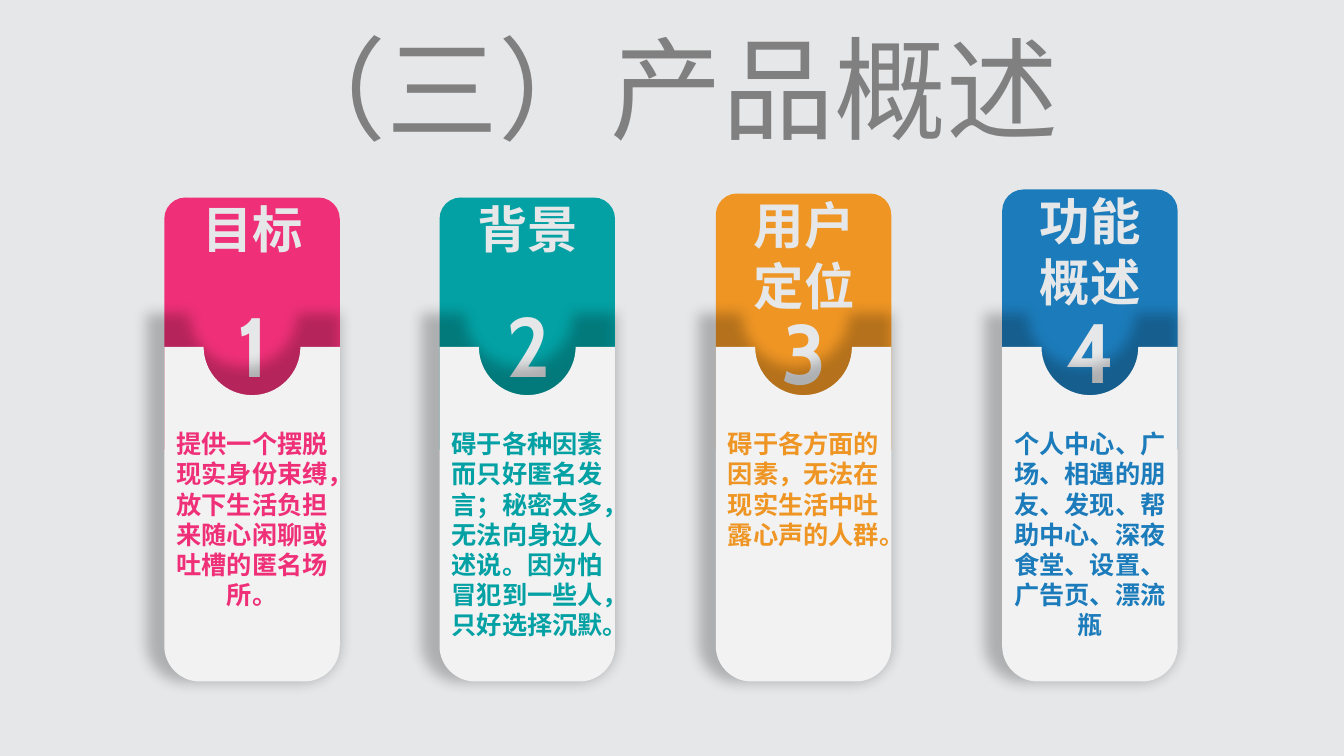
from lxml import etree
from pptx import Presentation
from pptx.dml.color import RGBColor
from pptx.enum.lang import MSO_LANGUAGE_ID
from pptx.enum.shapes import MSO_SHAPE
from pptx.enum.text import MSO_ANCHOR, MSO_AUTO_SIZE, PP_ALIGN
from pptx.util import Inches, Pt

ROUND_TOP = MSO_SHAPE.ROUND_2_SAME_RECTANGLE
CENTER = PP_ALIGN.CENTER
TOP = MSO_ANCHOR.TOP
GROW = MSO_AUTO_SIZE.SHAPE_TO_FIT_TEXT
CHINESE = MSO_LANGUAGE_ID.SIMPLIFIED_CHINESE

FONT = "Cabin"
PALE, GRAY, PANEL = "E6E7E9", "808080", "F2F2F2"
CARD_WIDTH = 1.74
HEADER_BOTTOM = 4.46
PANEL_TOP, PANEL_HEIGHT = 3.44, 3.32
NOTCH, CORNER = 0.48, 0.35
MIDDLE = CARD_WIDTH / 2
ROUNDNESS = 0.55
DRAWING = "http://schemas.openxmlformats.org/drawingml/2006/main"
TAG = f"{{{DRAWING}}}"
SHADOW = f"""<a:effectLst xmlns:a="{DRAWING}">
<a:outerShdw blurRad="127000" dist="0" dir="0" sx="110000" sy="110000" algn="br" rotWithShape="0">
<a:srgbClr val="000000"><a:alpha val="23000"/></a:srgbClr>
</a:outerShdw></a:effectLst>"""

# left, header top, number top, colour, caption, description height, description
CARDS = [
    (1.63, 1.96, 2.86, "EF3078", "目标", 1.92,
     "提供一个摆脱现实身份束缚，放下生活负担来随心闲聊或吐槽的匿名场所。"),
    (4.36, 1.96, 2.86, "03A1A4", "背景", 2.22,
     "碍于各种因素而只好匿名发言；秘密太多，无法向身边人述说。因为怕冒犯到一些人，只好选择沉默。"),
    (7.1, 1.92, 2.93, "EE9524", "用户\n定位", 1.31,
     "碍于各方面的因素，无法在现实生活中吐露心声的人群。"),
    (9.94, 1.88, 2.92, "1C7CBB", "功能\n概述", 2.22,
     "个人中心、广场、相遇的朋友、发现、帮助中心、深夜食堂、设置、广告页、漂流瓶"),
]

# Panel outline from its top left: each point, with the corner its curve bends toward
OUTLINE = [
    ((0, 0), None),
    ((MIDDLE - NOTCH, 0), None),
    ((MIDDLE, NOTCH), (MIDDLE - NOTCH, NOTCH)),
    ((MIDDLE + NOTCH, 0), (MIDDLE + NOTCH, NOTCH)),
    ((CARD_WIDTH, 0), None),
    ((CARD_WIDTH, PANEL_HEIGHT - CORNER), None),
    ((CARD_WIDTH - CORNER, PANEL_HEIGHT), (CARD_WIDTH, PANEL_HEIGHT)),
    ((CORNER, PANEL_HEIGHT), None),
    ((0, PANEL_HEIGHT - CORNER), (0, PANEL_HEIGHT)),
]


def write(box, text, size, color, bold=True):
    """Fill a text shape with centred, formatted text."""
    frame = box.text_frame
    frame.word_wrap = True
    frame.auto_size = GROW
    frame.vertical_anchor = TOP
    frame.text = text
    for para in frame.paragraphs:
        para.alignment = CENTER
        for span in para.runs:
            span.font.name = FONT
            span.font.size = Pt(size)
            span.font.bold = bold
            span.font.language_id = CHINESE
            span.font.color.rgb = RGBColor.from_string(color)


def paint(shape, color):
    shape.shadow.inherit = False
    shape.fill.solid()
    shape.fill.fore_color.rgb = RGBColor.from_string(color)
    shape.line.fill.background()


deck = Presentation()
deck.slide_width, deck.slide_height = Inches(13.33), Inches(7.5)
page = deck.slides.add_slide(deck.slide_layouts[5])
page.background.fill.solid()
page.background.fill.fore_color.rgb = RGBColor.from_string(PALE)
shapes = page.shapes

title = shapes.title
title.left, title.top, title.width, title.height = map(Inches, (0.85, 0.14, 11.53, 1.45))
write(title, "（三）产品概述", 80, GRAY, bold=False)

for number, card in enumerate(CARDS, 1):
    left, top, number_top, color, caption, description_height, description = card
    group = shapes.add_group_shape().shapes
    header = group.add_shape(ROUND_TOP, Inches(left), Inches(top),
                             Inches(CARD_WIDTH), Inches(HEADER_BOTTOM - top))
    header.adjustments[0] = 0.121
    header.adjustments[1] = 0
    paint(header, color)

    caption_height = 0.71 + 0.6 * caption.count("\n")
    caption_place = (left - 0.11, top - 0.04, 1.97, caption_height)
    write(group.add_textbox(*map(Inches, caption_place)), caption, 36, PALE)
    number_place = (left + 0.39, number_top, 0.98, 1.11)
    write(group.add_textbox(*map(Inches, number_place)), str(number), 60, PALE)

    builder = shapes.build_freeform(Inches(left), Inches(PANEL_TOP))
    builder.add_line_segments([(Inches(left + x), Inches(PANEL_TOP + y))
                               for (x, y), _ in OUTLINE[1:]])
    panel = builder.convert_to_shape()
    paint(panel, PANEL)
    properties = panel.element.spPr
    properties.replace(properties.find(TAG + "effectLst"), etree.fromstring(SHADOW))

    # Turn the straight segments that have a corner into cubic curves
    segments = list(properties.iter(TAG + "lnTo"))
    for segment, (start, _), (end, corner) in zip(segments, OUTLINE, OUTLINE[1:]):
        if corner is None:
            continue
        segment.tag = TAG + "cubicBezTo"
        for place, anchor in enumerate((start, end)):
            x, y = (a + ROUNDNESS * (c - a) for a, c in zip(anchor, corner))
            control = etree.Element(TAG + "pt", x=str(Inches(x)), y=str(Inches(y)))
            segment.insert(place, control)

    description_place = (left, 4.2, CARD_WIDTH, description_height)
    write(shapes.add_textbox(*map(Inches, description_place)), description, 18, color)

deck.save("out.pptx")
